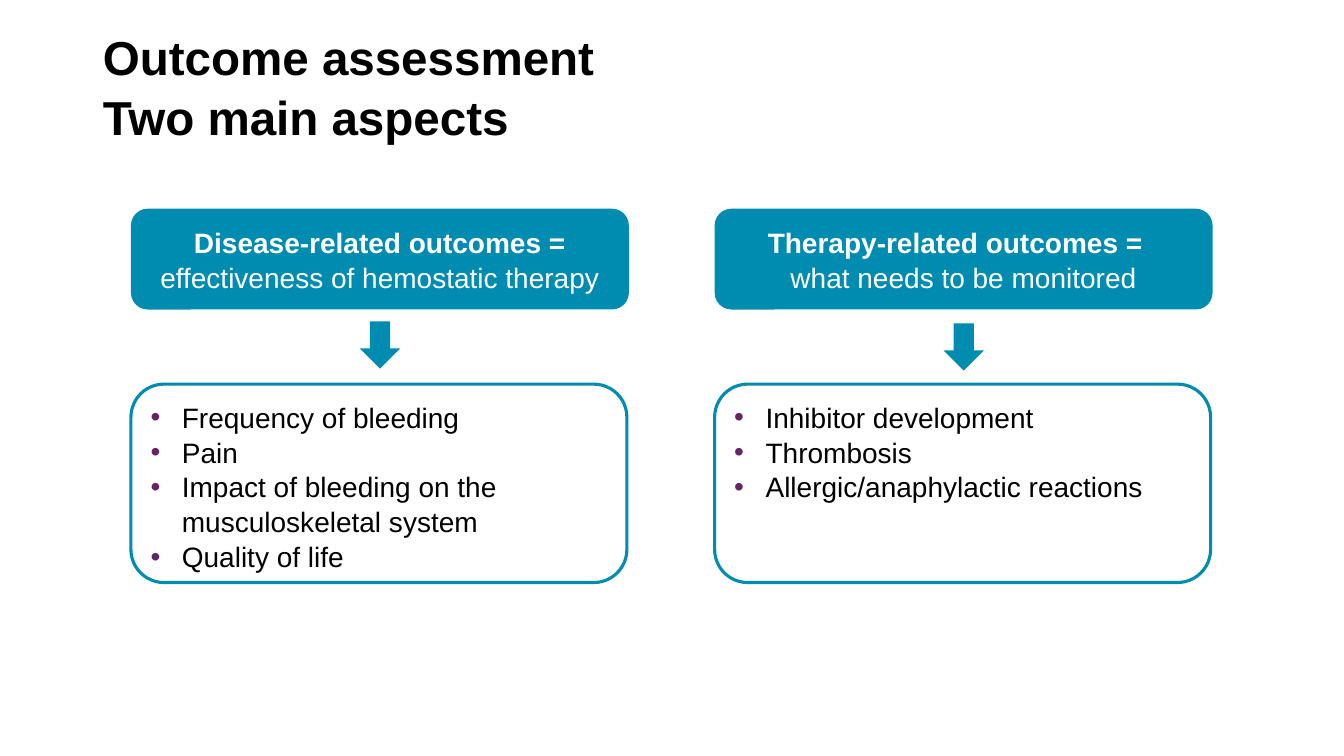
from lxml.etree import SubElement as Sub
from pptx import Presentation
from pptx.dml.color import RGBColor
from pptx.enum.shapes import MSO_SHAPE as Kind
from pptx.enum.text import MSO_ANCHOR as Anchor, PP_ALIGN as Align
from pptx.oxml.ns import qn
from pptx.util import Cm, Pt

TEAL = RGBColor(0x00, 0x8B, 0xB0)
PLUM = RGBColor(0x64, 0x25, 0x66)
BLACK = RGBColor(0, 0, 0)
WHITE = RGBColor(0xFF, 0xFF, 0xFF)
LEFT, STEP = 3.3, 14.71

COLUMNS = [
    ("Disease-related outcomes =\neffectiveness of hemostatic therapy", 0, 8.1,
     "Frequency of bleeding\nPain\n"
     "Impact of bleeding on the musculoskeletal system\nQuality of life"),
    ("Therapy-related outcomes =\nwhat needs to be monitored", 0.42, 8.15,
     "Inhibitor development\nThrombosis\nAllergic/anaphylactic reactions"),
]


def style(para, size, color, bold, align):
    para.alignment = align
    para.line_spacing = 1.04
    for run in para.runs:
        font = run.font
        font.name, font.size, font.bold = "Arial", Pt(size), bold
        font.color.rgb = color


def bullet(para):
    props = para._p.get_or_add_pPr()
    props.set("marL", str(Cm(0.79)))
    props.set("indent", str(-Cm(0.79)))
    Sub(Sub(props, qn("a:buClr")), qn("a:srgbClr"), val=str(PLUM))
    Sub(props, qn("a:buFont"), typeface="Arial")
    Sub(props, qn("a:buChar"), char="•")


def shape(slide, kind, left, top, width, height):
    item = slide.shapes.add_shape(kind, Cm(left), Cm(top), Cm(width), Cm(height))
    item.shadow.inherit = False
    return item


def solid(slide, *place):
    item = shape(slide, *place)
    item.fill.solid()
    item.fill.fore_color.rgb = TEAL
    item.line.fill.background()
    return item


def title(slide, text):
    item = slide.shapes.title
    item.left, item.top = Cm(2.34), Cm(0.64)
    item.width, item.height = Cm(29.21), Cm(3.02)
    frame = item.text_frame
    frame.text = text
    frame.vertical_anchor = Anchor.MIDDLE
    style(frame.paragraphs[0], 34, BLACK, True, Align.LEFT)


def head(slide, left, text, shift):
    frame = solid(slide, Kind.ROUNDED_RECTANGLE, left, 5.26, 12.55, 2.54).text_frame
    frame.text = text
    frame.word_wrap = True
    frame.vertical_anchor = Anchor.MIDDLE
    frame.margin_right = Cm(0.25 + shift)
    first, second = frame.paragraphs
    style(first, 20, WHITE, True, Align.CENTER)
    style(second, 20, WHITE, False, Align.CENTER)
    second._p.get_or_add_pPr().set("marL", str(Cm(shift)))


def body(slide, left, text):
    item = shape(slide, Kind.ROUNDED_RECTANGLE, left, 9.68, 12.5, 5)
    item.fill.background()
    item.line.color.rgb = TEAL
    item.line.width = Pt(2.25)
    frame = item.text_frame
    frame.text = text
    frame.word_wrap = True
    frame.vertical_anchor = Anchor.TOP
    for para in frame.paragraphs:
        bullet(para)
        style(para, 20, BLACK, False, Align.LEFT)


def main():
    deck = Presentation()
    deck.slide_width, deck.slide_height = Cm(33.87), Cm(19.05)
    slide = deck.slides.add_slide(deck.slide_layouts[5])
    title(slide, "Outcome assessment\vTwo main aspects")
    for col, (label, shift, top, points) in enumerate(COLUMNS):
        left = LEFT + col * STEP
        head(slide, left, label, shift)
        body(slide, left, points)
        solid(slide, Kind.DOWN_ARROW, left + 5.77, top, 1.02, 1.19)
    deck.save("out.pptx")


if __name__ == "__main__":
    main()
